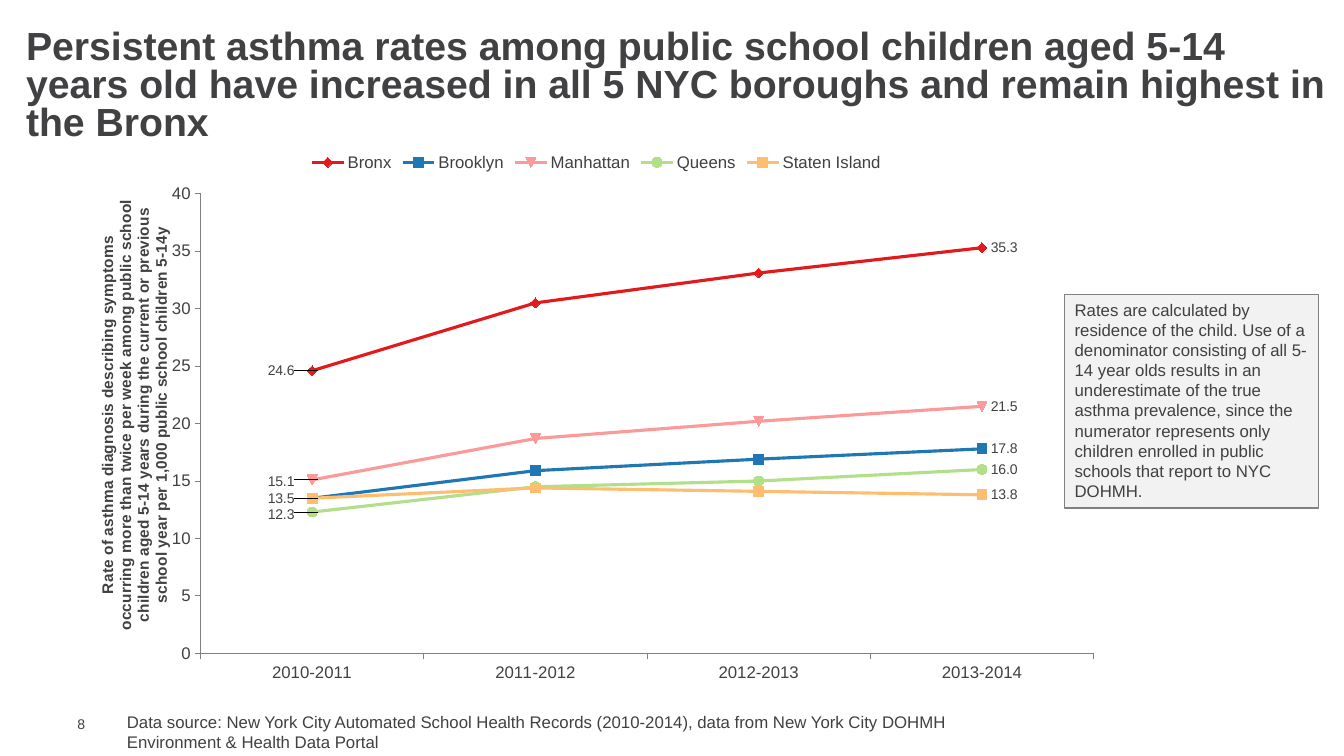
from lxml import etree
from pptx import Presentation
from pptx.chart.data import CategoryChartData as ChartData
from pptx.dml.color import RGBColor as RGB
from pptx.enum.chart import XL_CHART_TYPE as Kind, XL_LABEL_POSITION as Spot
from pptx.enum.chart import XL_LEGEND_POSITION as Place, XL_MARKER_STYLE as Mark
from pptx.enum.chart import XL_TICK_MARK as Tick
from pptx.enum.shapes import MSO_SHAPE as Shape
from pptx.enum.text import MSO_ANCHOR as Anchor, PP_ALIGN as Align
from pptx.oxml.ns import qn
from pptx.util import Emu, Pt

PX = 9144  # 100 px to the inch
FONT = "Arial"
HUES = {
    "text": "414042", "axis": "808080", "panel": "F2F2F2",
    "Bronx": "E31A1C", "Brooklyn": "1F78B4", "Manhattan": "FB9A99",
    "Queens": "B2DF8A", "Staten Island": "FDBF6F",
}
YEARS = ["2010-2011", "2011-2012", "2012-2013", "2013-2014"]
RATES = {
    "Bronx": (24.6, 30.5, 33.1, 35.3),
    "Brooklyn": (13.5, 15.9, 16.9, 17.8),
    "Manhattan": (15.1, 18.7, 20.2, 21.5),
    "Queens": (12.3, 14.5, 15, 16),
    "Staten Island": (13.5, 14.4, 14.1, 13.8),
}
MARKS = {"Bronx": Mark.DIAMOND, "Brooklyn": Mark.SQUARE,
         "Queens": Mark.CIRCLE, "Staten Island": Mark.SQUARE}
# Vertical shift of each first label, as a share of the chart height
SHIFTS = {"Bronx": 0, "Brooklyn": 0, "Manhattan": 0.004, "Queens": 0.004}

TITLE = ("Persistent asthma rates among public school children aged 5-14 years old "
         "have increased in all 5 NYC boroughs and remain highest in the Bronx")
RATE = ("Rate of asthma diagnosis describing symptoms occurring more than twice per week "
        "among public school children aged 5-14 years during the current or previous "
        "school year per 1,000 public school children 5-14y")
NOTE = ("Rates are calculated by residence of the child. Use of a denominator consisting "
        "of all 5-14 year olds results in an underestimate of the true asthma prevalence, "
        "since the numerator represents only children enrolled in public schools that "
        "report to NYC DOHMH.")
SOURCE = ("Data source: New York City Automated School Health Records (2010-2014), "
          "data from New York City DOHMH",
          "Environment & Health Data Portal")


def hue(name):
    return RGB.from_string(HUES[name])


def emu(box):
    return [Emu(n * PX) for n in box]


def style(font, size, bold=False):
    font.name, font.size, font.bold = FONT, Pt(size), bold
    font.color.rgb = hue("text")


def write(frame, lines, size, bold=False, gap=None):
    frame.word_wrap = True
    for i, line in enumerate(lines):
        para = frame.add_paragraph() if i else frame.paragraphs[0]
        para.alignment = Align.LEFT
        para.line_spacing = gap
        run = para.add_run()
        run.text = line
        style(run.font, size, bold)


def add_text(slide, box, lines, size, bold=False, gap=None, anchor=Anchor.TOP):
    frame = slide.shapes.add_textbox(*emu(box)).text_frame
    frame.vertical_anchor = anchor
    write(frame, lines, size, bold, gap)
    return frame


def add_page(slide, box):
    frame = add_text(slide, box, ["8"], 10, anchor=Anchor.MIDDLE)
    frame.margin_top = frame.margin_right = frame.margin_bottom = 0


def add_note(slide, box):
    panel = slide.shapes.add_shape(Shape.RECTANGLE, *emu(box))
    panel.shadow.inherit = False
    panel.fill.solid()
    panel.fill.fore_color.rgb = hue("panel")
    panel.line.color.rgb = hue("axis")
    panel.line.width = Pt(0.75)
    panel.text_frame.vertical_anchor = Anchor.TOP
    write(panel.text_frame, [NOTE], 12)


def layout(**parts):
    """Make a manual chart layout from tag and value pairs."""
    root = etree.Element(qn("c:layout"))
    manual = etree.SubElement(root, qn("c:manualLayout"))
    for tag, val in parts.items():
        etree.SubElement(manual, qn("c:" + tag)).set("val", str(val))
    return root


def set_layout(parent, new, after=None):
    """Replace the layout of a chart part, placing it behind the given child."""
    for old in parent.findall(qn("c:layout")):
        parent.remove(old)
    spot = 0 if after is None else parent.index(after) + 1
    parent.insert(spot, new)


def set_axes(chart):
    for axis in (chart.category_axis, chart.value_axis):
        axis.has_major_gridlines = False
        axis.major_tick_mark, axis.minor_tick_mark = Tick.OUTSIDE, Tick.NONE
        axis.format.line.color.rgb = hue("axis")
        axis.format.line.width = Pt(0.75)
        style(axis.tick_labels.font, 12)
    axis = chart.value_axis
    axis.minimum_scale, axis.maximum_scale, axis.major_unit = 0, 40, 5
    axis.tick_labels.number_format = "0"
    axis.tick_labels.number_format_is_linked = False
    title = axis.axis_title
    run = title.text_frame.paragraphs[0].add_run()
    run.text = RATE
    style(run.font, 11, True)
    node = title._element
    set_layout(node, layout(xMode="edge", yMode="edge", x=0.01, y=0.1),
               node.find(qn("c:tx")))


def set_series(line):
    name = line.name
    line.smooth = False
    line.format.line.color.rgb = hue(name)
    line.format.line.width = Pt(2.25)
    mark = line.marker
    if name in MARKS:
        mark.style = MARKS[name]
    mark.size = 7
    mark.format.fill.solid()
    mark.format.fill.fore_color.rgb = hue(name)
    mark.format.line.color.rgb = hue(name)

    line.data_labels.show_value = False
    for i in (0, len(YEARS) - 1):
        if i == 0 and name not in SHIFTS:
            continue
        label = line.points[i].data_label
        style(label.font, 10)
        label.position = Spot.RIGHT
        if i == 0:
            idx = line._element.find(".//" + qn("c:dLbl") + "/" + qn("c:idx"))
            set_layout(idx.getparent(), layout(x=-0.052, y=SHIFTS[name]), idx)


def add_rates(slide, box):
    data = ChartData(number_format="0.0")
    data.categories = YEARS
    for name, vals in RATES.items():
        data.add_series(name, vals)
    chart = slide.shapes.add_chart(Kind.LINE_MARKERS, *emu(box), data).chart
    chart.has_title = False
    style(chart.font, 10)
    chart.has_legend = True
    chart.legend.position = Place.TOP
    chart.legend.include_in_layout = False
    style(chart.legend.font, 12)
    plot = chart.plots[0]
    plot.vary_by_categories = False
    set_axes(chart)
    for line in plot.series:
        set_series(line)
    area = chart._chartSpace.find(".//" + qn("c:plotArea"))
    set_layout(area, layout(layoutTarget="inner", xMode="edge", yMode="edge",
                            x=0.114, y=0.094, w=0.871, h=0.837))


def main():
    deck = Presentation()
    deck.slide_width, deck.slide_height = emu((1333, 750))
    slide = deck.slides.add_slide(deck.slide_layouts[6])
    add_page(slide, (67, 710, 43, 17))
    add_text(slide, (16, 25, 1308, 123), [TITLE], 28, True, 0.8, Anchor.MIDDLE)
    add_rates(slide, (83, 141, 1017, 545))
    add_text(slide, (116, 701, 992, 50), SOURCE, 12)
    add_note(slide, (1056, 292, 252, 212))
    deck.save("out.pptx")


if __name__ == "__main__":
    main()
